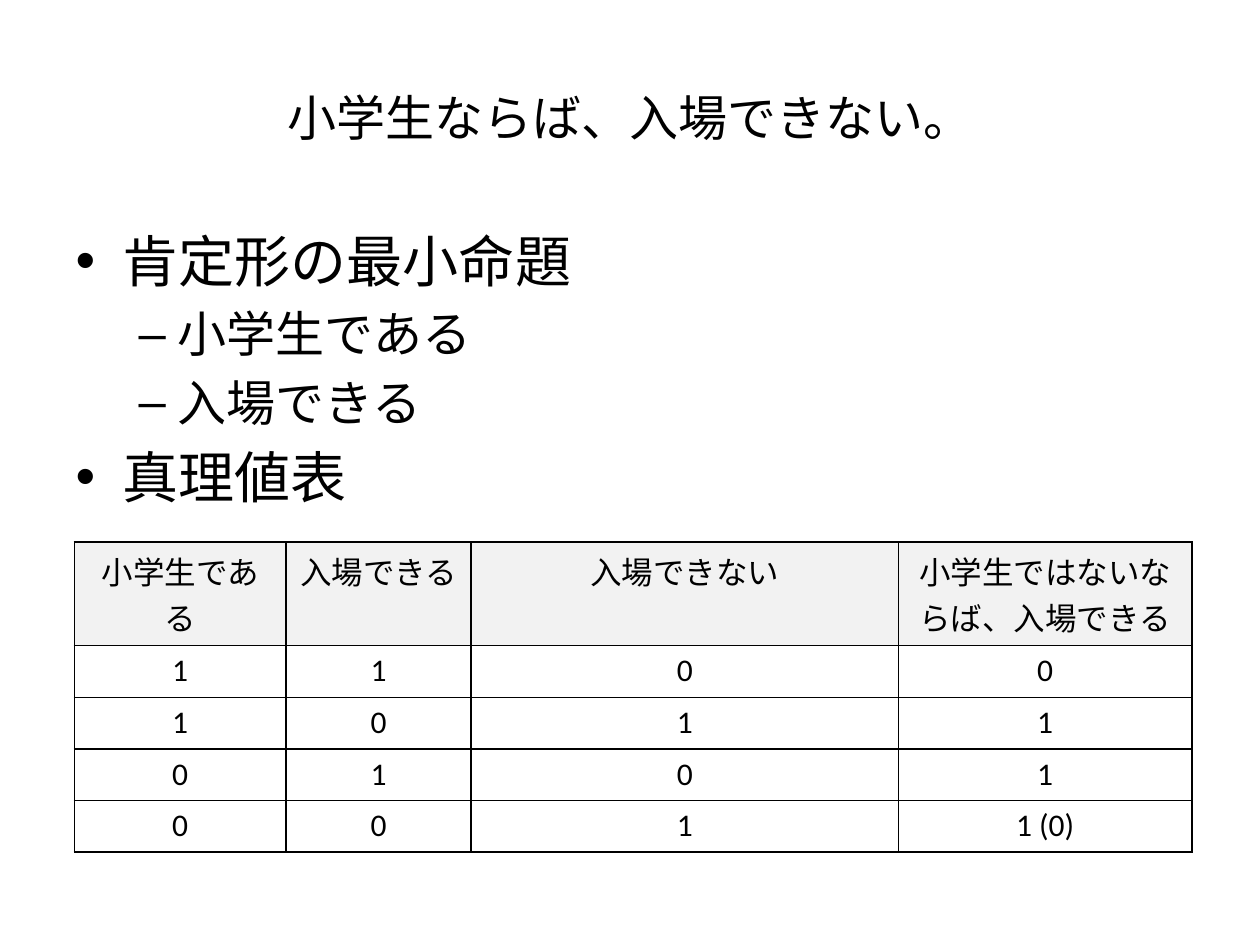
from lxml.etree import SubElement
from pptx import Presentation
from pptx.dml.color import RGBColor
from pptx.enum.text import MSO_ANCHOR, PP_ALIGN
from pptx.oxml.ns import qn
from pptx.util import Inches, Pt

COLORS = {"text": "000000", "border": "000000", "header": "F2F2F2"}


def write_text(paragraph, text, size=18, align=None, level=0):
    paragraph.level = level
    paragraph.alignment = align
    run = paragraph.add_run()
    run.text = text
    run.font.size = Pt(size)
    run.font.name = "Calibri"
    run.font.color.rgb = RGBColor.from_string(COLORS["text"])


def set_borders(cell, color, width):
    properties = cell._tc.get_or_add_tcPr()
    for index, side in enumerate(("lnL", "lnR", "lnT", "lnB")):
        line = properties.makeelement(qn(f"a:{side}"), {"w": str(Pt(width))})
        fill = SubElement(line, qn("a:solidFill"))
        SubElement(fill, qn("a:srgbClr"), val=color)
        properties.insert(index, line)


presentation = Presentation()
presentation.slide_width = Inches(10)
presentation.slide_height = Inches(7.5)
slide = presentation.slides.add_slide(presentation.slide_layouts[1])

title = slide.shapes.title
title.left, title.top, title.width, title.height = (
    Inches(value) for value in (0.5, 0.3, 9, 1.25)
)
title.text_frame.vertical_anchor = MSO_ANCHOR.MIDDLE
write_text(title.text_frame.paragraphs[0], "小学生ならば、入場できない。",
           size=28, align=PP_ALIGN.CENTER)

body = slide.placeholders[1]
body.left, body.top, body.width, body.height = (
    Inches(value) for value in (0.5, 1.75, 9, 4.95)
)
outline = [
    ("肯定形の最小命題", 0),
    ("小学生である", 1),
    ("入場できる", 1),
    ("真理値表", 0),
]
for index, (text, level) in enumerate(outline):
    frame = body.text_frame
    paragraph = frame.add_paragraph() if index else frame.paragraphs[0]
    write_text(paragraph, text, size=28 if level else 32, level=level)

truth_rows = [
    ("小学生である", "入場できる", "入場できない", "小学生ではないならば、入場できる"),
    ("1", "1", "0", "0"),
    ("1", "0", "1", "1"),
    ("0", "1", "0", "1"),
    ("0", "0", "1", "1 (0)"),
]
column_widths = [1.68, 1.47, 3.39, 2.33]
row_height = 0.41
table = slide.shapes.add_table(
    len(truth_rows), len(column_widths), Inches(0.59), Inches(4.3),
    Inches(sum(column_widths)), Inches(row_height * len(truth_rows)),
).table
table.horz_banding = False
table.first_row = False
for column, width in zip(table.columns, column_widths):
    column.width = Inches(width)
for row_index, texts in enumerate(truth_rows):
    table.rows[row_index].height = Inches(row_height)
    for column_index, text in enumerate(texts):
        cell = table.cell(row_index, column_index)
        if row_index == 0:
            cell.fill.solid()
            cell.fill.fore_color.rgb = RGBColor.from_string(COLORS["header"])
        else:
            cell.fill.background()
        set_borders(cell, COLORS["border"], 1)
        write_text(cell.text_frame.paragraphs[0], text, align=PP_ALIGN.CENTER)

presentation.save("out.pptx")
